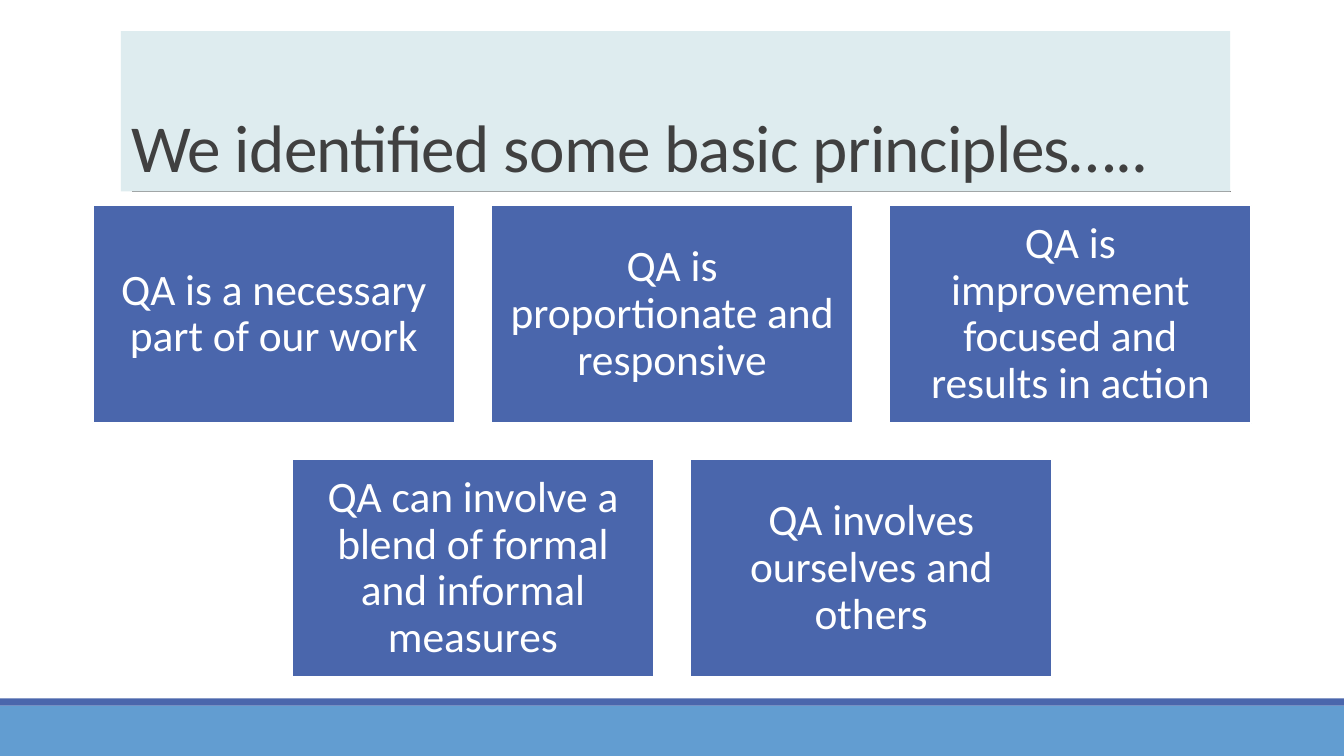
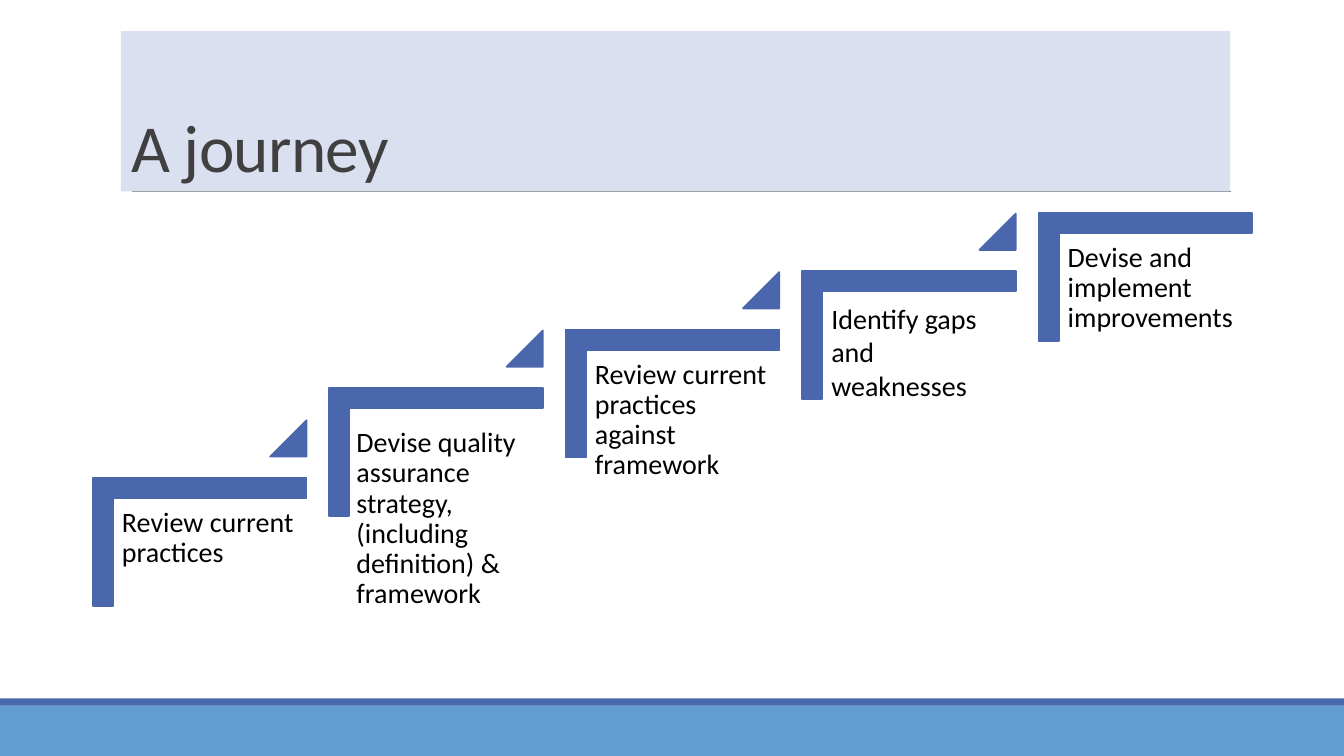
"""Two slides on quality assurance: principles as cards and a journey as steps."""
from dataclasses import dataclass

from lxml import etree
from pptx import Presentation
from pptx.dml.color import RGBColor
from pptx.enum import shapes, text
from pptx.oxml.ns import qn
from pptx.util import Inches, Pt


@dataclass(frozen=True)
class Theme:
    font: str = "Calibri"
    accent: str = "4A66AC"
    footer: str = "629DD1"
    rule: str = "808080"
    title: str = "404040"
    light: str = "FFFFFF"
    dark: str = "000000"
    title_size: float = 48
    card_size: float = 31
    step_size: float = 20
    outline: float = 1.25
    hairline: float = 0.5


THEME = Theme()
KIND = shapes.MSO_SHAPE
WIDTH, HEIGHT = 13.33, 7.5
TITLE_AREA = (1.2, 0.31, 11, 1.59)

PRINCIPLES = {
    "title": "We identified some basic principles…..",
    "tint": "DEECEF",
    "rows": [
        ["QA is a necessary part of our work",
         "QA is proportionate and responsive",
         "QA is improvement focused and results in action"],
        ["QA can involve a blend of formal and informal measures",
         "QA involves ourselves and others"],
    ],
}
JOURNEY = {
    "title": "A journey",
    "tint": "DAE0EF",
    "steps": [
        {"label": "Review current practices", "top": 4.74},
        {"label": "Devise quality assurance strategy, (including definition) & framework",
         "top": 3.85, "drop": 0.32, "shift": 0.19, "height": 2.3},
        {"label": "Review current practices against framework", "top": 3.27},
        {"label": "Identify gaps and weaknesses", "top": 2.69, "spacing": 1.0},
        {"label": "Devise and implement improvements", "top": 2.11},
    ],
}


def inches(*values):
    return [Inches(value) for value in values]


def paint(shape, fill, line=None):
    shape.shadow.inherit = False
    shape.fill.solid()
    shape.fill.fore_color.rgb = RGBColor.from_string(fill)
    if line:
        shape.line.color.rgb = RGBColor.from_string(line)
        shape.line.width = Pt(THEME.outline)
    else:
        shape.line.fill.background()


def add_block(page, kind, area, fill, line=None):
    shape = page.shapes.add_shape(kind, *inches(*area))
    paint(shape, fill, line)
    return shape


def write(shape, wording, size, color, align=text.PP_ALIGN.LEFT,
          anchor=text.MSO_ANCHOR.TOP, spacing=0.9, inset=None):
    frame = shape.text_frame
    frame.text = wording
    frame.word_wrap = True
    frame.auto_size = text.MSO_AUTO_SIZE.NONE
    frame.vertical_anchor = anchor
    if inset is not None:
        frame.margin_left = frame.margin_right = Inches(inset)
        frame.margin_top = frame.margin_bottom = Inches(inset)
    para = frame.paragraphs[0]
    para.alignment = align
    para.line_spacing = spacing
    span = para.runs[0]
    span.font.name = THEME.font
    span.font.size = Pt(size)
    span.font.color.rgb = RGBColor.from_string(color)
    return span


def decorate_layout(layout, page):
    """Draw the shared bands and title rule, then move them to the layout."""
    rule = page.shapes.add_connector(
        shapes.MSO_CONNECTOR.STRAIGHT, *inches(1.31, 1.9, 12.21, 1.9))
    rule.line.color.rgb = RGBColor.from_string(THEME.rule)
    rule.line.width = Pt(THEME.hairline)
    etree.SubElement(rule.element.spPr, qn("a:effectLst"))
    footer = add_block(page, KIND.RECTANGLE, (0, 7, WIDTH, 0.5), THEME.footer)
    stripe = add_block(page, KIND.RECTANGLE, (0, 6.93, WIDTH, 0.07), THEME.accent)
    for shared in (footer, stripe, rule):
        layout.shapes.element.append(shared.element)


def add_page(deck, layout, content):
    page = deck.slides.add_slide(layout)
    title = page.shapes.title
    title.left, title.top, title.width, title.height = inches(*TITLE_AREA)
    title.fill.solid()
    title.fill.fore_color.rgb = RGBColor.from_string(content["tint"])
    span = write(title, content["title"], THEME.title_size, THEME.title,
                 anchor=text.MSO_ANCHOR.BOTTOM, spacing=0.85)
    span.font._element.set("spc", "-50")
    return page


def draw_cards(page, rows):
    width, height, gap, top = 3.59, 2.16, 0.36, 2.04
    for row, labels in enumerate(rows):
        span = len(labels) * (width + gap) - gap
        for column, label in enumerate(labels):
            left = (WIDTH - span) / 2 + column * (width + gap)
            area = (left, top + row * (height + gap), width, height)
            card = add_block(page, KIND.RECTANGLE, area, THEME.accent, THEME.light)
            write(card, label, THEME.card_size, THEME.light, text.PP_ALIGN.CENTER,
                  text.MSO_ANCHOR.MIDDLE, inset=0.13)


def add_corner(page, left, top, width, height, bar):
    right, bottom = left + width, top + height
    outline = [(right, top), (right, top + bar), (left + bar, top + bar),
               (left + bar, bottom), (left, bottom)]
    builder = page.shapes.build_freeform(*inches(left, top))
    builder.add_line_segments([inches(*point) for point in outline], close=True)
    paint(builder.convert_to_shape(), THEME.accent, THEME.accent)


def draw_steps(page, steps):
    start, pitch, width, height, bar, marker = 0.92, 2.345, 2.12, 1.27, 0.2, 0.36
    for index, step in enumerate(steps):
        left, top = start + index * pitch, step["top"]
        add_corner(page, left, top, width, height, bar)
        label = page.shapes.add_textbox(*inches(
            left + step.get("shift", 0.21), top + step.get("drop", 0.22),
            1.91, step.get("height", 1.68)))
        write(label, step["label"], THEME.step_size, THEME.dark,
              spacing=step.get("spacing", 0.9), inset=0.08)
        if index < len(steps) - 1:
            area = (left + width - marker, top - 0.57, marker, marker)
            arrow = add_block(page, KIND.ISOSCELES_TRIANGLE, area,
                              THEME.accent, THEME.accent)
            arrow.adjustments[0] = 1


def main():
    deck = Presentation()
    deck.slide_width, deck.slide_height = inches(WIDTH, HEIGHT)
    layout = deck.slide_layouts.get_by_name("Title Only")
    principles = add_page(deck, layout, PRINCIPLES)
    decorate_layout(layout, principles)
    draw_cards(principles, PRINCIPLES["rows"])
    journey = add_page(deck, layout, JOURNEY)
    draw_steps(journey, JOURNEY["steps"])
    deck.save("out.pptx")


if __name__ == "__main__":
    main()
